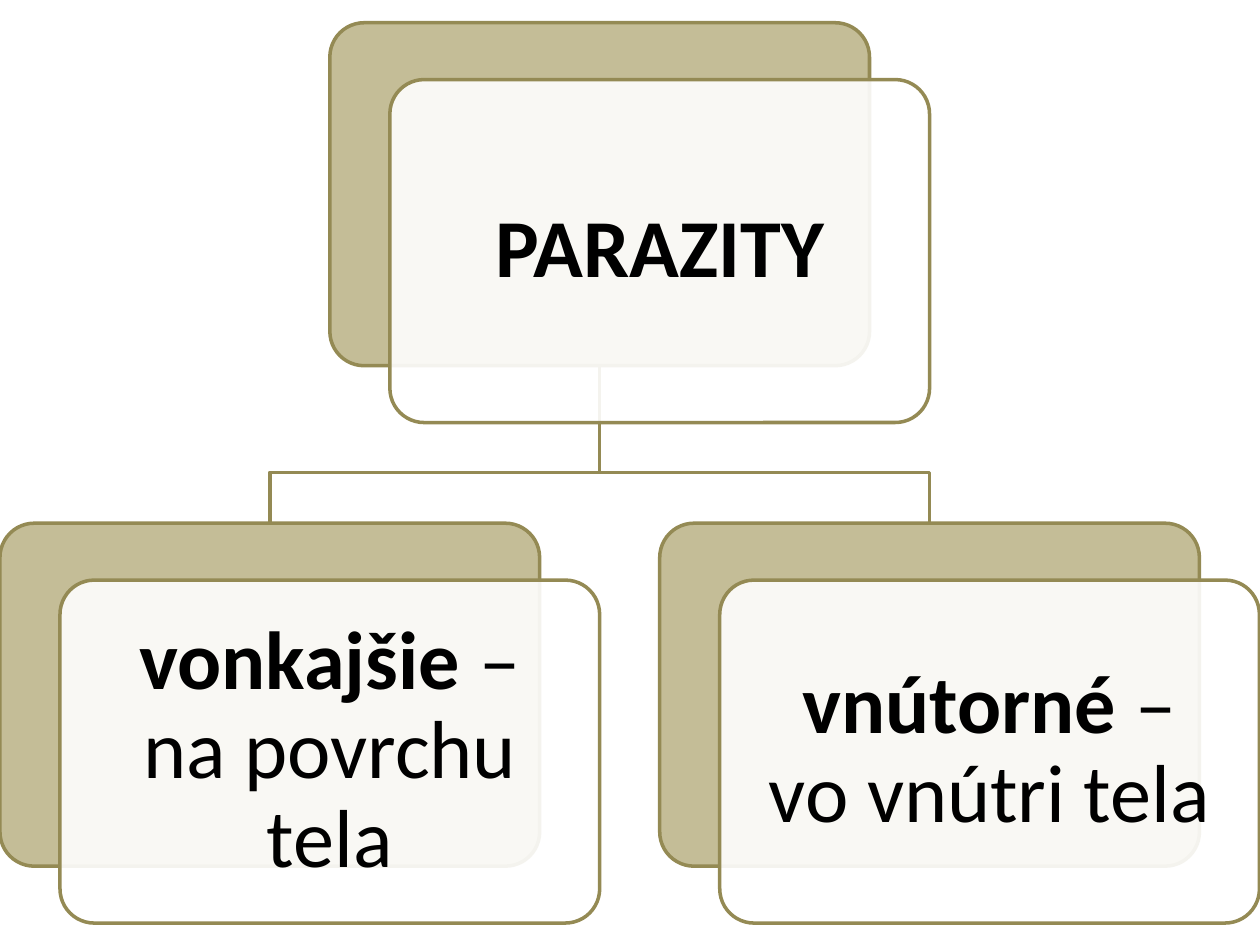
import pptx
import pptx.dml.color
import pptx.enum.shapes
import pptx.enum.text
import pptx.oxml.ns
import pptx.util
from lxml import etree

Pt = pptx.util.Pt

COLORS = {"card": "C4BD97", "line": "948A54", "panel": "FFFFFF", "text": "000000"}
FONT = "Calibri"
TEXT_SIZE = 47

# Tree geometry in points
CARD_WIDTH, CARD_HEIGHT = 308.4, 196
PANEL_SHIFT_X, PANEL_SHIFT_Y = 34.3, 32.5
COLUMN_PITCH = 377
ROOT_LEFT, ROOT_TOP = COLUMN_PITCH / 2, 13
CHILD_TOP = 299
ELBOW_Y = 270


class TreeSlide:
    def __init__(self, slide):
        self.slide = slide

    def color(self, name):
        return pptx.dml.color.RGBColor.from_string(COLORS[name])

    def outline(self, shape):
        shape.shadow.inherit = False
        shape.line.color.rgb = self.color("line")
        shape.line.width = Pt(2)

    def branch(self, points):
        start, *rest = [(Pt(x), Pt(y)) for x, y in points]
        builder = self.slide.shapes.build_freeform(*start)
        builder.add_line_segments(rest, close=False)
        shape = builder.convert_to_shape()
        shape.fill.background()
        self.outline(shape)

    def rounded_box(self, left, top, fill, opacity=100):
        shape = self.slide.shapes.add_shape(
            pptx.enum.shapes.MSO_SHAPE.ROUNDED_RECTANGLE,
            Pt(left), Pt(top), Pt(CARD_WIDTH), Pt(CARD_HEIGHT))
        shape.adjustments[0] = 0.1
        shape.fill.solid()
        shape.fill.fore_color.rgb = self.color(fill)
        if opacity < 100:
            qn = pptx.oxml.ns.qn
            solid_fill = shape.element.spPr.find(qn("a:solidFill"))
            fill_color = solid_fill.find(qn("a:srgbClr"))
            etree.SubElement(fill_color, qn("a:alpha"), val=str(opacity * 1000))
        self.outline(shape)
        return shape

    def label(self, shape, runs):
        frame = shape.text_frame
        frame.word_wrap = True
        frame.vertical_anchor = pptx.enum.text.MSO_ANCHOR.MIDDLE
        frame.margin_left = frame.margin_right = Pt(14.4)
        frame.margin_top = frame.margin_bottom = Pt(14.4)
        paragraph = frame.paragraphs[0]
        paragraph.alignment = pptx.enum.text.PP_ALIGN.CENTER
        paragraph.line_spacing = 0.9
        for text, bold in runs:
            run = paragraph.add_run()
            run.text = text
            run.font.name = FONT
            run.font.size = Pt(TEXT_SIZE)
            run.font.bold = bold
            run.font.color.rgb = self.color("text")

    def node(self, left, top, runs):
        self.rounded_box(left, top, "card")
        panel = self.rounded_box(
            left + PANEL_SHIFT_X, top + PANEL_SHIFT_Y, "panel", opacity=90)
        self.label(panel, runs)


def main():
    presentation = pptx.Presentation()
    presentation.slide_width, presentation.slide_height = Pt(720), Pt(540)
    tree = TreeSlide(presentation.slides.add_slide(presentation.slide_layouts[6]))

    children = [
        [("vonkajšie", True), (" – na povrchu tela", False)],
        [("vnútorné", True), (" – vo vnútri tela", False)],
    ]

    # Branches from the root to each child, behind the nodes
    root_x = ROOT_LEFT + CARD_WIDTH / 2
    for column in range(len(children)):
        child_x = column * COLUMN_PITCH + CARD_WIDTH / 2
        tree.branch([(root_x, ROOT_TOP + CARD_HEIGHT), (root_x, ELBOW_Y),
                     (child_x, ELBOW_Y), (child_x, CHILD_TOP)])

    # Root and child nodes
    tree.node(ROOT_LEFT, ROOT_TOP, [("PARAZITY", True)])
    for column, runs in enumerate(children):
        tree.node(column * COLUMN_PITCH, CHILD_TOP, runs)

    presentation.save("out.pptx")


if __name__ == "__main__":
    main()
